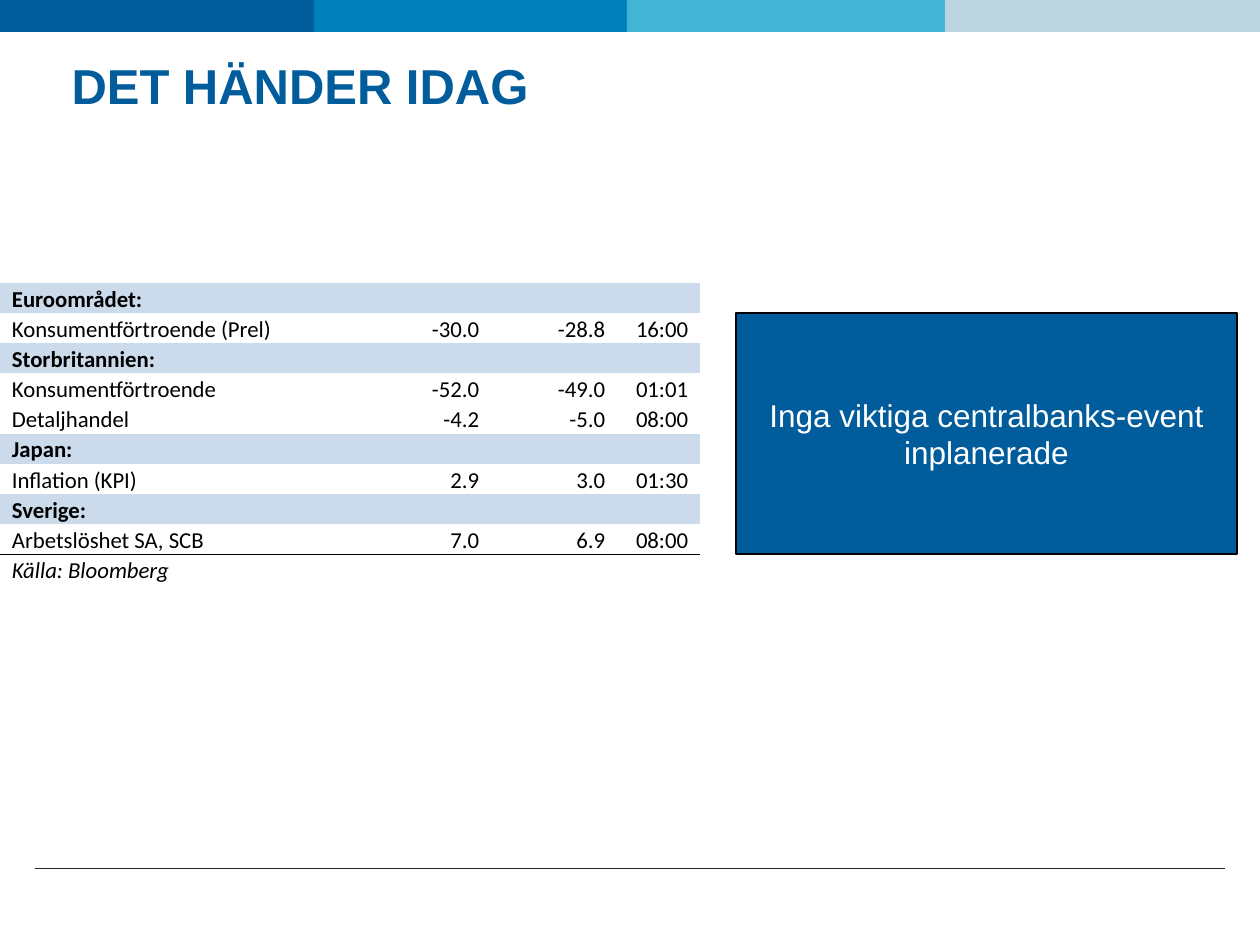
"""Build the daily calendar slide with macro releases and central bank events."""
from lxml.etree import SubElement
from pptx import Presentation
from pptx.dml.color import RGBColor
from pptx.enum.shapes import MSO_CONNECTOR as CONNECTOR, MSO_SHAPE as SHAPE
from pptx.enum.text import MSO_ANCHOR as ANCHOR, PP_ALIGN as ALIGN
from pptx.oxml.ns import qn
from pptx.util import Pt

PX = 914400 / 126
NAVY, BAND, BLACK, WHITE = "005C9B", "CCDBEB", "000000", "FFFFFF"
NO_GRID_STYLE = "{2D5ABB26-0587-4C30-8999-92F81FD0307C}"


def px(*lengths):
    return [round(length * PX) for length in lengths]


def write(frame, text, size=13, font="Calibri", color=BLACK, bold=False,
          italic=False, align=ALIGN.LEFT, spacing=None):
    paragraph = frame.paragraphs[0]
    paragraph.alignment = align
    paragraph.line_spacing = spacing
    if not text:
        SubElement(paragraph._p, qn("a:endParaRPr"), sz=str(size * 100))
        return
    run = paragraph.add_run()
    run.text = text
    run.font.size, run.font.name = Pt(size), font
    run.font.bold, run.font.italic = bold, italic
    run.font.color.rgb = RGBColor.from_string(color)


prs = Presentation()
prs.slide_width, prs.slide_height = px(1260, 945)
slide = prs.slides.add_slide(prs.slide_layouts[5])
shapes = slide.shapes

for left, color in [(0, NAVY), (314, "0080BB"), (942, "BCD4E0"), (627, "42B5D7")]:
    stripe = shapes.add_shape(SHAPE.RECTANGLE, *px(left, 0, 318, 32))
    stripe.shadow.inherit = False
    stripe.fill.solid()
    stripe.fill.fore_color.rgb = RGBColor.from_string(color)
    stripe.line.fill.background()

footer_rule = shapes.add_connector(CONNECTOR.STRAIGHT, *px(35, 868, 1225, 868))
footer_rule.line.color.rgb = RGBColor.from_string("262626")
footer_rule.line.width = Pt(0.25)
SubElement(footer_rule._element.spPr, qn("a:effectLst"))

heading = shapes.title
heading.left, heading.top, heading.width, heading.height = px(59, 59, 1131, 77)
heading.text_frame.vertical_anchor = ANCHOR.TOP
write(heading.text_frame, "DET HÄNDER IDAG", size=28, font="Arial", color=NAVY,
      bold=True, spacing=Pt(28))

releases = [
    ["Euroområdet:"],
    ["Konsumentförtroende (Prel)", "-30.0", "-28.8", "16:00"],
    ["Storbritannien:"],
    ["Konsumentförtroende", "-52.0", "-49.0", "01:01"],
    ["Detaljhandel", "-4.2", "-5.0", "08:00"],
    ["Japan:"],
    ["Inflation (KPI)", "2.9", "3.0", "01:30"],
    ["Sverige:"],
    ["Arbetslöshet SA, SCB", "7.0", "6.9", "08:00"],
    ["Källa: Bloomberg"],
]
source_row = len(releases) - 1
calendar = shapes.add_table(len(releases), 4, *px(0, 283, 700, 302)).table
calendar.first_row = calendar.horz_banding = False
calendar._tbl.tblPr.find(qn("a:tableStyleId")).text = NO_GRID_STYLE
for column, width in zip(calendar.columns, px(325, 166, 126, 83)):
    column.width = width

for r, release in enumerate(releases):
    is_region = release[0].endswith(":")
    for c in range(4):
        cell = calendar.cell(r, c)
        cell.vertical_anchor = ANCHOR.BOTTOM
        cell.margin_left, cell.margin_right = px(0, 12) if c else px(12, 0)
        cell.margin_top = cell.margin_bottom = 0
        write(cell.text_frame, release[c] if c < len(release) else "",
              bold=is_region, italic=r == source_row,
              align=ALIGN.RIGHT if c else ALIGN.LEFT)
        edge = {source_row - 1: "a:lnB", source_row: "a:lnT"}.get(r)
        if edge:
            border = SubElement(cell._tc.get_or_add_tcPr(), qn(edge), w=str(Pt(0.5)))
            SubElement(SubElement(border, qn("a:solidFill")), qn("a:srgbClr"), val=BLACK)
        if is_region:
            cell.fill.solid()
            cell.fill.fore_color.rgb = RGBColor.from_string(BAND)
        else:
            cell.fill.background()

events = shapes.add_shape(SHAPE.RECTANGLE, *px(736, 313, 501, 241))
events.shadow.inherit = False
events.fill.solid()
events.fill.fore_color.rgb = RGBColor.from_string(NAVY)
events.line.color.rgb = RGBColor.from_string(BLACK)
events.line.width = Pt(1)
events.text_frame.word_wrap = True
events.text_frame.vertical_anchor = ANCHOR.MIDDLE
write(events.text_frame, "Inga viktiga centralbanks-event inplanerade", size=18,
      font="Arial", color=WHITE, align=ALIGN.CENTER)

prs.save("out.pptx")
